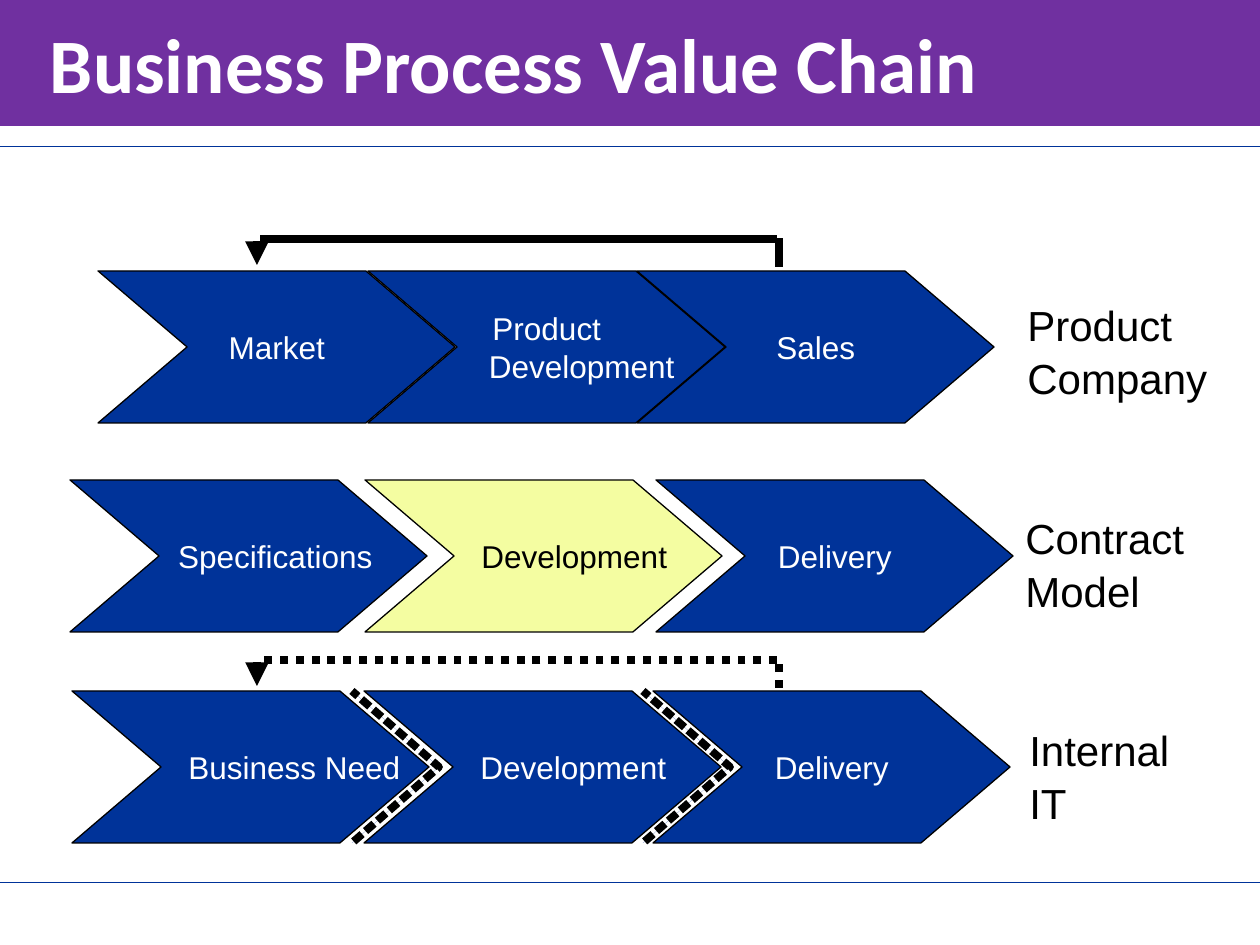
import pptx
import pptx.util
import pptx.dml.color
import pptx.enum.dml
import pptx.enum.shapes
import pptx.enum.text
import pptx.oxml.ns
import lxml.etree

RGB = pptx.dml.color.RGBColor
NAVY = RGB(0x00, 0x33, 0x99)
PURPLE = RGB(0x70, 0x30, 0xA0)
LEMON = RGB(0xF4, 0xFD, 0xA1)
BLACK = RGB(0x00, 0x00, 0x00)
WHITE = RGB(0xFF, 0xFF, 0xFF)
SHAPE = pptx.enum.shapes.MSO_SHAPE
ALIGN = pptx.enum.text.PP_ALIGN
MIDDLE = pptx.enum.text.MSO_ANCHOR.MIDDLE
DOT = pptx.enum.dml.MSO_LINE.ROUND_DOT
qn = pptx.oxml.ns.qn
Pt = pptx.util.Pt
SCALE = 914400 / 126


def px(n):
    return pptx.util.Emu(round(n * SCALE))


def rule(x1, y1, x2, y2, color, width, dash=None, head=False):
    """Draw a straight line, with an arrowhead at its end if head is set."""
    line = slide.shapes.add_connector(
        pptx.enum.shapes.MSO_CONNECTOR.STRAIGHT, px(x1), px(y1), px(x2), px(y2))
    line.line.color.rgb = color
    line.line.width = Pt(width)
    if dash:
        line.line.dash_style = dash
    if head:
        lxml.etree.SubElement(line.line._get_or_add_ln(), qn("a:tailEnd"), type="triangle")
    lxml.etree.SubElement(line._element.spPr, qn("a:effectLst"))


deck = pptx.Presentation()
deck.slide_width, deck.slide_height = px(1260), px(945)
slide = deck.slides.add_slide(deck.slide_layouts[6])

# Title band and page rules
for y in (146, 882):
    rule(0, y, 1260, y, NAVY, 0.5)

band = slide.shapes.add_shape(SHAPE.RECTANGLE, 0, 0, px(1260), px(126))
band.shadow.inherit = False
band.fill.solid()
band.fill.fore_color.rgb = PURPLE
band.line.fill.background()
frame = band.text_frame
frame.margin_left = px(50)
frame.vertical_anchor = MIDDLE
para = frame.paragraphs[0]
para.text = "Business Process Value Chain"
para.alignment = ALIGN.LEFT
para.font.name = "Calibri"
para.font.size = Pt(44)
para.font.bold = True
para.font.color.rgb = WHITE

# Chains: top, then left, text inset, fill and text lines of each step
INSET = 13
chains = [
    (271, [(98, INSET, NAVY, ["Market"]),
           (368, INSET, NAVY, ["Product", "Development"]),
           (637, INSET, NAVY, ["Sales"])]),
    (480, [(70, 66, NAVY, ["Specifications"]),
           (365, 74, LEMON, ["Development"]),
           (656, INSET, NAVY, ["Delivery"])]),
    (691, [(72, 100, NAVY, ["Business Need"]),
           (364, 74, NAVY, ["Development"]),
           (653, INSET, NAVY, ["Delivery"])]),
]
for top, steps in chains:
    for left, inset, fill, lines in steps:
        step = slide.shapes.add_shape(SHAPE.CHEVRON, px(left), px(top), px(357), px(152))
        step.adjustments[0] = 0.586
        step.shadow.inherit = False
        step.fill.solid()
        step.fill.fore_color.rgb = fill
        step.line.color.rgb = BLACK
        step.line.width = Pt(0.75)
        frame = step.text_frame
        frame.word_wrap = False
        frame.vertical_anchor = MIDDLE
        frame.margin_left = px(inset)
        frame.text = "\n".join(lines)
        for i, para in enumerate(frame.paragraphs):
            if i:
                para._p.get_or_add_pPr().set("marL", str(px(70)))
            para.alignment = ALIGN.CENTER
            para.font.name = "Arial"
            para.font.size = Pt(18)
            para.font.color.rgb = BLACK if fill == LEMON else WHITE

# Chain names
for left, top, width, height, text in [
    (1015, 291, 217, 115, "Product Company"),
    (1013, 504, 204, 115, "Contract Model"),
    (1017, 716, 204, 115, "Internal IT"),
]:
    box = slide.shapes.add_textbox(px(left), px(top), px(width), px(height))
    box.text_frame.word_wrap = True
    para = box.text_frame.paragraphs[0]
    para.text = text
    para.line_spacing = 1.05
    para.font.name = "Arial"
    para.font.size = Pt(24)
    para.font.color.rgb = BLACK

# Feedback loops from last step to first
for y, dash in ((239, None), (660, DOT)):
    rule(779, y + 28, 779, y - 1, BLACK, 4.5, dash)
    rule(777, y, 260, y, BLACK, 4.5, dash)
    rule(257, y + 2, 257, y + 26, BLACK, 4.5, dash, head=True)

# Dotted borders between the internal steps
for left in (352, 643):
    edge = slide.shapes.add_shape(SHAPE.CHEVRON, px(left), px(691), px(87), px(152))
    edge.adjustments[0] = 1
    edge.shadow.inherit = False
    edge.fill.solid()
    edge.fill.fore_color.rgb = NAVY
    edge.line.color.rgb = BLACK
    edge.line.width = Pt(4.5)
    edge.line.dash_style = DOT

deck.save("out.pptx")
